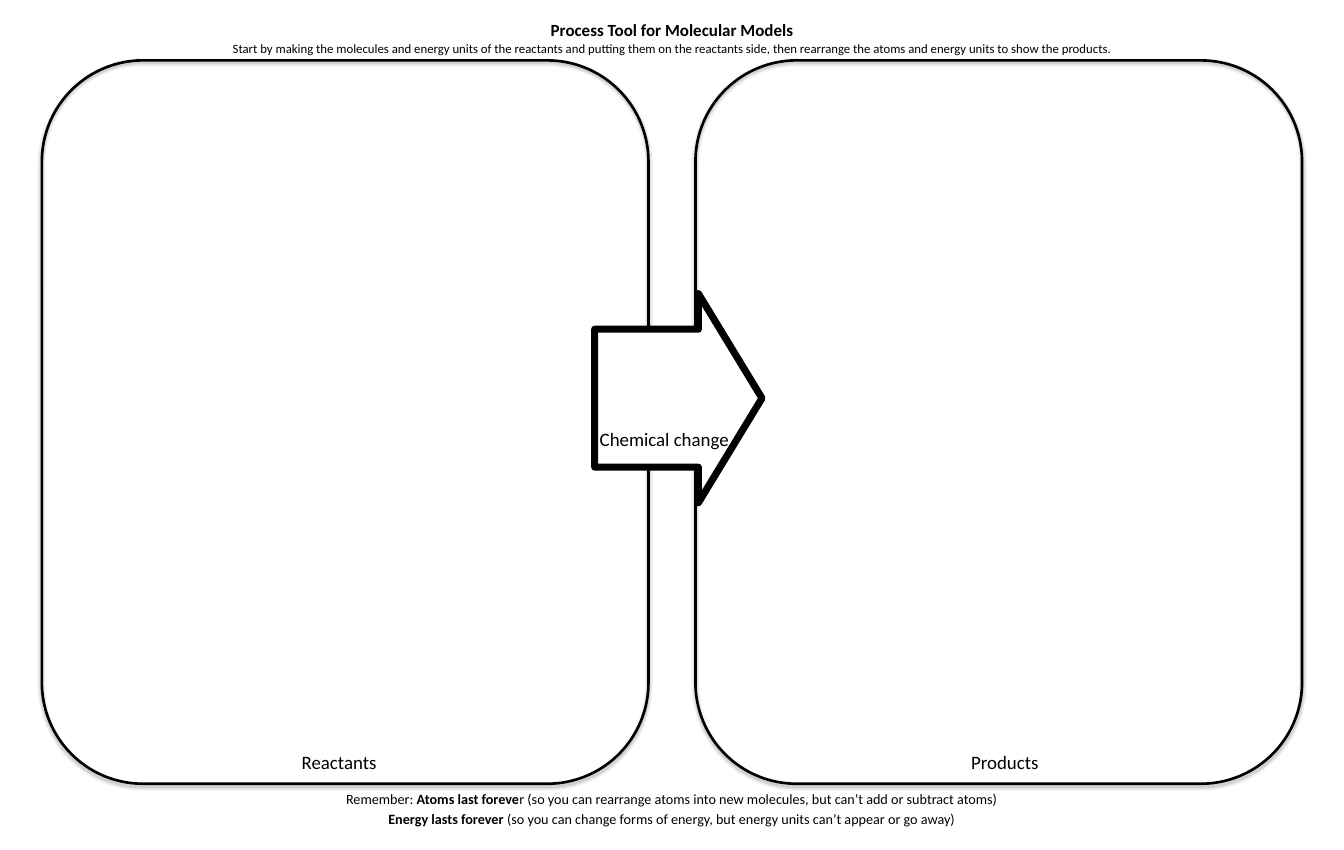
from lxml import etree
from pptx import Presentation
from pptx.dml.color import RGBColor
from pptx.enum.shapes import MSO_SHAPE
from pptx.enum.text import MSO_ANCHOR, MSO_AUTO_SIZE, PP_ALIGN
from pptx.oxml.ns import qn
from pptx.util import Inches, Pt

ROUND, ARROW = MSO_SHAPE.ROUNDED_RECTANGLE, MSO_SHAPE.RIGHT_ARROW
MIDDLE, TOP = MSO_ANCHOR.MIDDLE, MSO_ANCHOR.TOP
CENTER, LEFT = PP_ALIGN.CENTER, PP_ALIGN.LEFT
FIXED = MSO_AUTO_SIZE.NONE
BLACK = RGBColor(0, 0, 0)
WHITE = RGBColor(255, 255, 255)
FONT = "Calibri"
WIDE, HIGH = Inches(15.8), Inches(9.99)
COL, ROW = WIDE / 100, HIGH / 100


def grid(x, y, w, h):
    return int(x * COL), int(y * ROW), int(w * COL), int(h * ROW)


def inner(box, x, y, w, h):
    left, top, wide, high = box
    return (int(left + x * wide), int(top + y * high),
            int(w * wide), int(h * high))


def style(par, size, align):
    par.alignment = align
    par.font.name = FONT
    par.font.size = Pt(size)
    par.font.color.rgb = BLACK


def holder(shape, box, anchor):
    shape.left, shape.top, shape.width, shape.height = box
    frame = shape.text_frame
    frame.auto_size = FIXED
    frame.word_wrap = True
    frame.vertical_anchor = anchor
    frame.margin_left = frame.margin_right = Inches(0.15)
    frame.margin_top = frame.margin_bottom = Inches(0.07)
    return frame


def add_run(par, text, bold):
    run = par.add_run()
    run.text = text
    run.font.bold = bold
    return run


def head(slide, box):
    par = holder(slide.shapes.title, box, MIDDLE).paragraphs[0]
    style(par, 14.4, CENTER)
    add_run(par, "Process Tool for Molecular Models", True)
    par.add_line_break()
    hint = add_run(par, "Start by making the molecules and energy units of the "
                   "reactants and putting them on the reactants side, then "
                   "rearrange the atoms and energy units to show the products.",
                   False)
    hint.font.size = Pt(10.8)


def foot(slide, box):
    frame = holder(slide.placeholders[1], box, TOP)
    lines = [
        [("Remember: ", False), ("Atoms last foreve", True),
         ("r (so you can rearrange atoms into new molecules, "
          "but can’t add or subtract atoms)", False)],
        [("Energy lasts forever ", True),
         ("(so you can change forms of energy, "
          "but energy units can’t appear or go away)", False)],
    ]
    for i, line in enumerate(lines):
        par = frame.add_paragraph() if i else frame.paragraphs[0]
        style(par, 12, CENTER)
        for text, bold in line:
            add_run(par, text, bold)


def label(slide, box, text, align):
    frame = slide.shapes.add_textbox(*box).text_frame
    frame.word_wrap = False
    frame.vertical_anchor = MIDDLE
    par = frame.paragraphs[0]
    par.text = text
    style(par, 16, align)


def outline(slide, kind, box, width):
    shape = slide.shapes.add_shape(kind, *box)
    shape.shadow.inherit = False
    shape.line.color.rgb = BLACK
    shape.line.width = Pt(width)
    return shape


def shade(shape):
    effect = shape._element.spPr.find(qn("a:effectLst"))
    outer = etree.SubElement(effect, qn("a:outerShdw"), blurRad=str(Pt(3.1)),
                             dist=str(Pt(1.8)), dir="5400000", rotWithShape="0")
    tint = etree.SubElement(outer, qn("a:srgbClr"), val=str(BLACK))
    etree.SubElement(tint, qn("a:alpha"), val="35000")


def panel(slide, box, text, mid):
    shape = outline(slide, ROUND, box, 2.25)
    shape.fill.background()
    shade(shape)
    wide = 0.24
    label(slide, inner(box, mid - wide / 2, 0.94, wide, 0.06), text, CENTER)


def change(slide, box):
    shape = outline(slide, ARROW, box, 6)
    shape.fill.solid()
    shape.fill.fore_color.rgb = WHITE
    shape.adjustments[0] = 0.66
    shape.adjustments[1] = 0.38
    label(slide, inner(box, -0.02, 0.62, 0.9, 0.15), "Chemical change", LEFT)


def main():
    deck = Presentation()
    deck.slide_width, deck.slide_height = WIDE, HIGH
    slide = deck.slides.add_slide(deck.slide_layouts[0])
    head(slide, grid(7.5, 1.8, 85, 5.3))
    foot(slide, grid(15, 92.3, 70, 5.9))
    edge, wide = 3.12, 45.13
    panel(slide, grid(edge, 7.11, wide, 85.1), "Reactants", 0.49)
    panel(slide, grid(100 - edge - wide, 7.11, wide, 85.1), "Products", 0.51)
    change(slide, grid(44.25, 34.55, 12.45, 24.6))
    deck.save("out.pptx")


if __name__ == "__main__":
    main()
